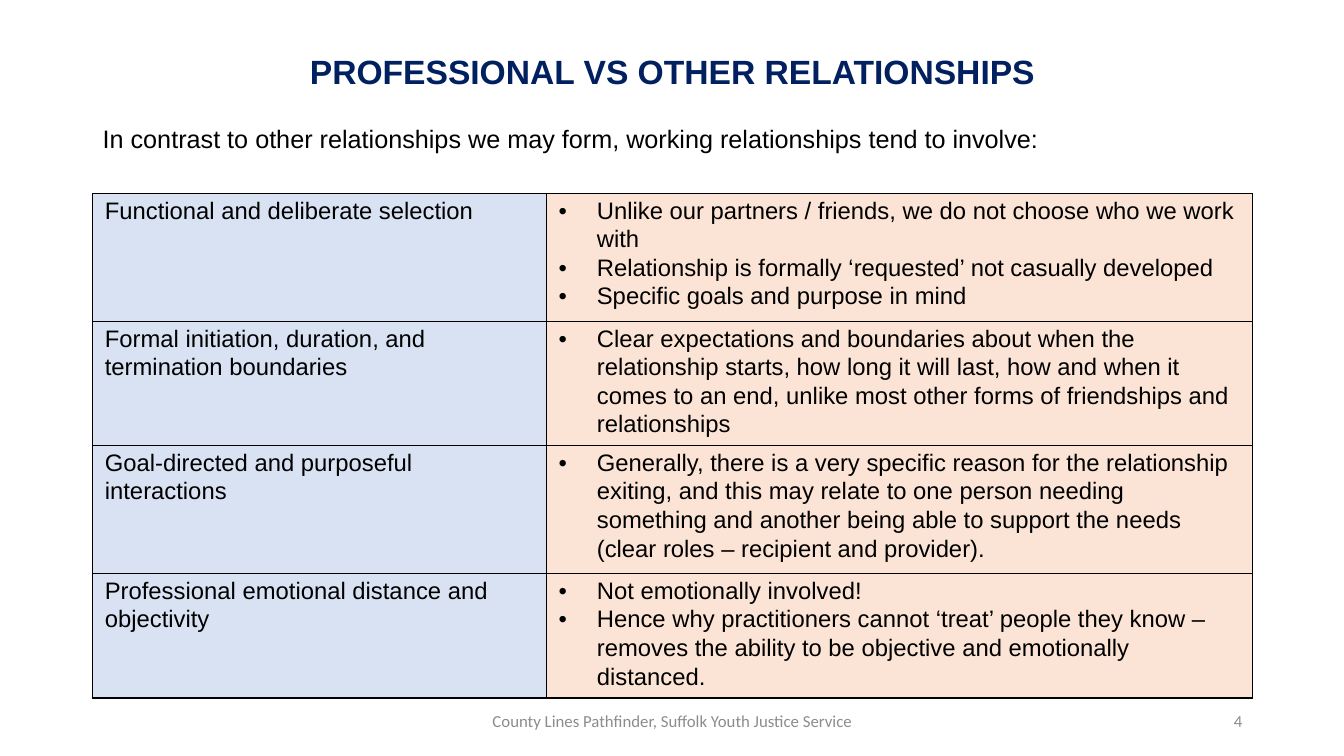
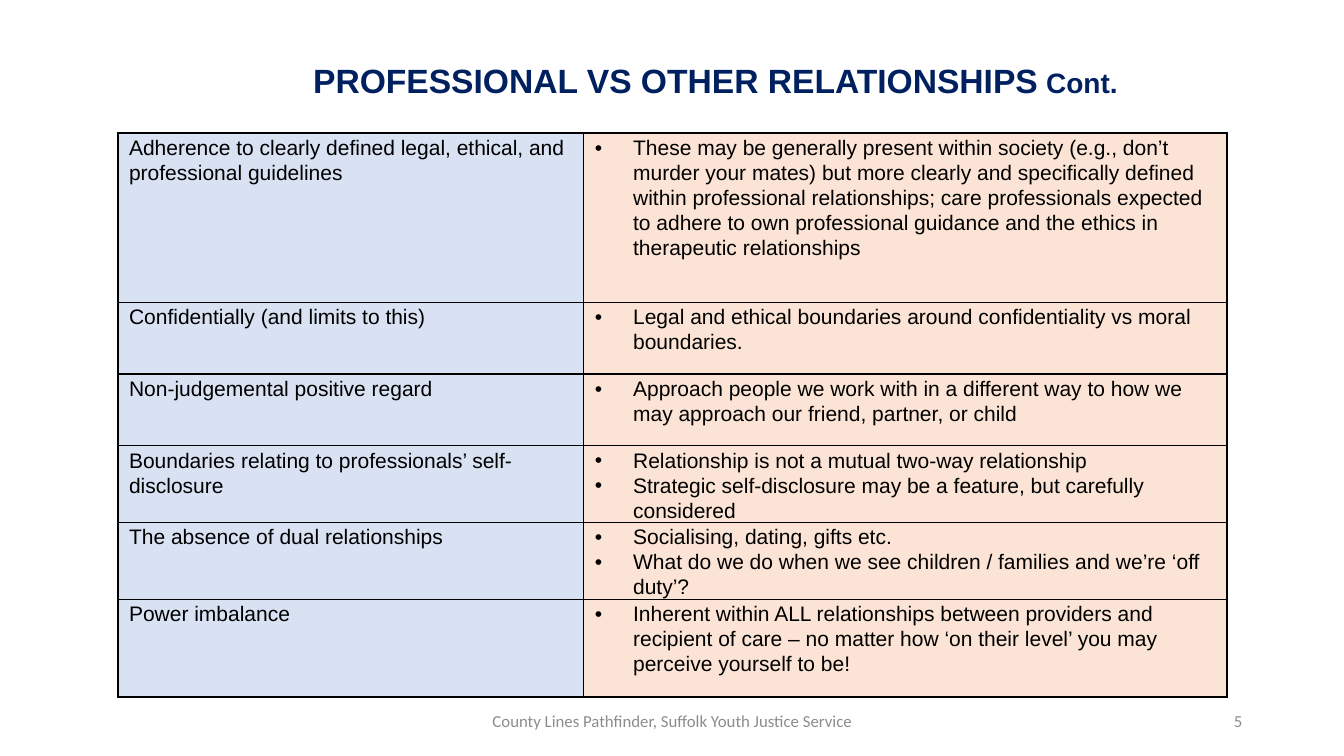
from lxml import etree
from pptx import Presentation
from pptx.dml.color import RGBColor
from pptx.enum.text import MSO_ANCHOR, MSO_AUTO_SIZE, PP_ALIGN
from pptx.oxml.ns import qn
from pptx.util import Inches, Pt

LEFT, CENTER, RIGHT = PP_ALIGN.LEFT, PP_ALIGN.CENTER, PP_ALIGN.RIGHT
TOP, MIDDLE, BOTTOM = MSO_ANCHOR.TOP, MSO_ANCHOR.MIDDLE, MSO_ANCHOR.BOTTOM
TITLE_ONLY = 5

NAVY, BLACK, GREY = "002060", "000000", "8C8C8C"
COLUMN_FILLS = ("D9E2F3", "FBE4D5")
BULLET_INDENT = Inches(0.38)
TITLE = "PROFESSIONAL VS OTHER RELATIONSHIPS"
FOOTER = "County Lines Pathfinder, Suffolk Youth Justice Service"
FIRST_NUMBER = 4

# Row heights leave room for the rows that grow with their text,
# so that each table ends above the footer.
SLIDES = [
    {
        "title_box": (0.92, 0.32, 11.5, 0.64),
        "suffix": "",
        "intro": "In contrast to other relationships we may form, "
                 "working relationships tend to involve:",
        "table_corner": (0.92, 1.92),
        "columns": (4.5, 7),
        "size": 17,
        "margin": 0.12,
        "rows": [
            (1.27, "Functional and deliberate selection", [
                "Unlike our partners / friends, we do not choose who we work with",
                "Relationship is formally ‘requested’ not casually developed",
                "Specific goals and purpose in mind"]),
            (1.04, "Formal initiation, duration, and termination boundaries", [
                "Clear expectations and boundaries about when the relationship starts, "
                "how long it will last, how and when it comes to an end, unlike most "
                "other forms of friendships and relationships"]),
            (1.27, "Goal-directed and purposeful interactions", [
                "Generally, there is a very specific reason for the relationship exiting, "
                "and this may relate to one person needing something and another being "
                "able to support the needs (clear roles – recipient and provider)."]),
            (1.04, "Professional emotional distance and objectivity", [
                "Not emotionally involved!",
                "Hence why practitioners cannot ‘treat’ people they know – removes the "
                "ability to be objective and emotionally distanced."]),
        ],
    },
    {
        "title_box": (2.67, 0.55, 8.93, 0.5),
        "suffix": " Cont. ",
        "intro": "",
        "table_corner": (1.17, 1.32),
        "columns": (4.62, 6.38),
        "size": 15,
        "margin": 0.11,
        "rows": [
            (1.68, "Adherence to clearly defined legal, ethical, and professional guidelines", [
                "These may be generally present within society (e.g., don’t murder your "
                "mates) but more clearly and specifically defined within professional "
                "relationships; care professionals expected to adhere to own professional "
                "guidance and the ethics in therapeutic relationships"]),
            (0.71, "Confidentially (and limits to this)", [
                "Legal and ethical boundaries around confidentiality vs moral boundaries."]),
            (0.71, "Non-judgemental positive regard", [
                "Approach people we work with in a different way to how we may approach "
                "our friend, partner, or child"]),
            (0.71, "Boundaries relating to professionals’ self-disclosure", [
                "Relationship is not a mutual two-way relationship",
                "Strategic self-disclosure may be a feature, but carefully considered"]),
            (0.71, "The absence of dual relationships", [
                "Socialising, dating, gifts etc.",
                "What do we do when we see children / families and we’re ‘off duty’?"]),
            (0.97, "Power imbalance", [
                "Inherent within ALL relationships between providers and recipient of "
                "care – no matter how ‘on their level’ you may perceive yourself to be!"]),
        ],
    },
]


def set_font(paragraph, size, color, name="Arial", bold=False):
    font = paragraph.font
    font.name, font.size, font.bold = name, Pt(size), bold
    font.color.rgb = RGBColor.from_string(color)


def add_text(slide, box, text, size, color, name, align, anchor):
    frame = slide.shapes.add_textbox(*map(Inches, box)).text_frame
    frame.word_wrap = True
    frame.vertical_anchor = anchor
    paragraph = frame.paragraphs[0]
    paragraph.text = text
    paragraph.alignment = align
    set_font(paragraph, size, color, name)


presentation = Presentation()
presentation.slide_width, presentation.slide_height = Inches(13.33), Inches(7.5)

for number, content in enumerate(SLIDES, FIRST_NUMBER):
    slide = presentation.slides.add_slide(presentation.slide_layouts[TITLE_ONLY])

    title = slide.shapes.title
    title.left, title.top, title.width, title.height = map(Inches, content["title_box"])
    title.text_frame.auto_size = MSO_AUTO_SIZE.NONE
    title.text_frame.vertical_anchor = BOTTOM
    paragraph = title.text_frame.paragraphs[0]
    paragraph.alignment = CENTER
    paragraph.line_spacing = 0.9
    set_font(paragraph, 24, NAVY, bold=True)
    paragraph.add_run().text = TITLE
    if content["suffix"]:
        suffix = paragraph.add_run()
        suffix.text = content["suffix"]
        suffix.font.size = Pt(20)

    if content["intro"]:
        add_text(slide, (0.92, 1.17, 11.5, 0.72), content["intro"],
                 18, BLACK, "Arial", LEFT, TOP)

    rows, columns = content["rows"], content["columns"]
    left, top = content["table_corner"]
    height = sum(row[0] for row in rows)
    table = slide.shapes.add_table(
        len(rows), len(columns), Inches(left), Inches(top),
        Inches(sum(columns)), Inches(height)).table
    table.first_row = table.horz_banding = False
    for column, width in zip(table.columns, columns):
        column.width = Inches(width)

    for row_index, (row_height, topic, points) in enumerate(rows):
        table.rows[row_index].height = Inches(row_height)
        for column_index, texts in enumerate(([topic], points)):
            cell = table.cell(row_index, column_index)
            cell.margin_left = cell.margin_right = Inches(content["margin"])
            cell.margin_top, cell.margin_bottom = Inches(0.02), 0

            properties = cell._tc.get_or_add_tcPr()
            for side in ("lnL", "lnR", "lnT", "lnB"):
                border = etree.SubElement(properties, qn(f"a:{side}"), w=str(Pt(1)))
                border_fill = etree.SubElement(border, qn("a:solidFill"))
                etree.SubElement(border_fill, qn("a:srgbClr"), val=BLACK)
            cell.fill.solid()
            cell.fill.fore_color.rgb = RGBColor.from_string(COLUMN_FILLS[column_index])

            cell.text = "\n".join(texts)
            for paragraph in cell.text_frame.paragraphs:
                paragraph.line_spacing = 1.07
                paragraph.space_after = Pt(8 if len(texts) == 1 else 0)
                if column_index == 1:
                    bullet_properties = paragraph._p.get_or_add_pPr()
                    bullet_properties.set("marL", str(BULLET_INDENT))
                    bullet_properties.set("indent", str(-BULLET_INDENT))
                    etree.SubElement(bullet_properties, qn("a:buFont"), typeface="Arial")
                    etree.SubElement(bullet_properties, qn("a:buChar"), char="•")
                set_font(paragraph, content["size"], BLACK)

    add_text(slide, (4.42, 6.95, 4.5, 0.4), FOOTER, 12, GREY, "Calibri", CENTER, MIDDLE)
    add_text(slide, (9.42, 6.95, 3, 0.4), str(number), 12, GREY, "Calibri", RIGHT, MIDDLE)

presentation.save("out.pptx")
